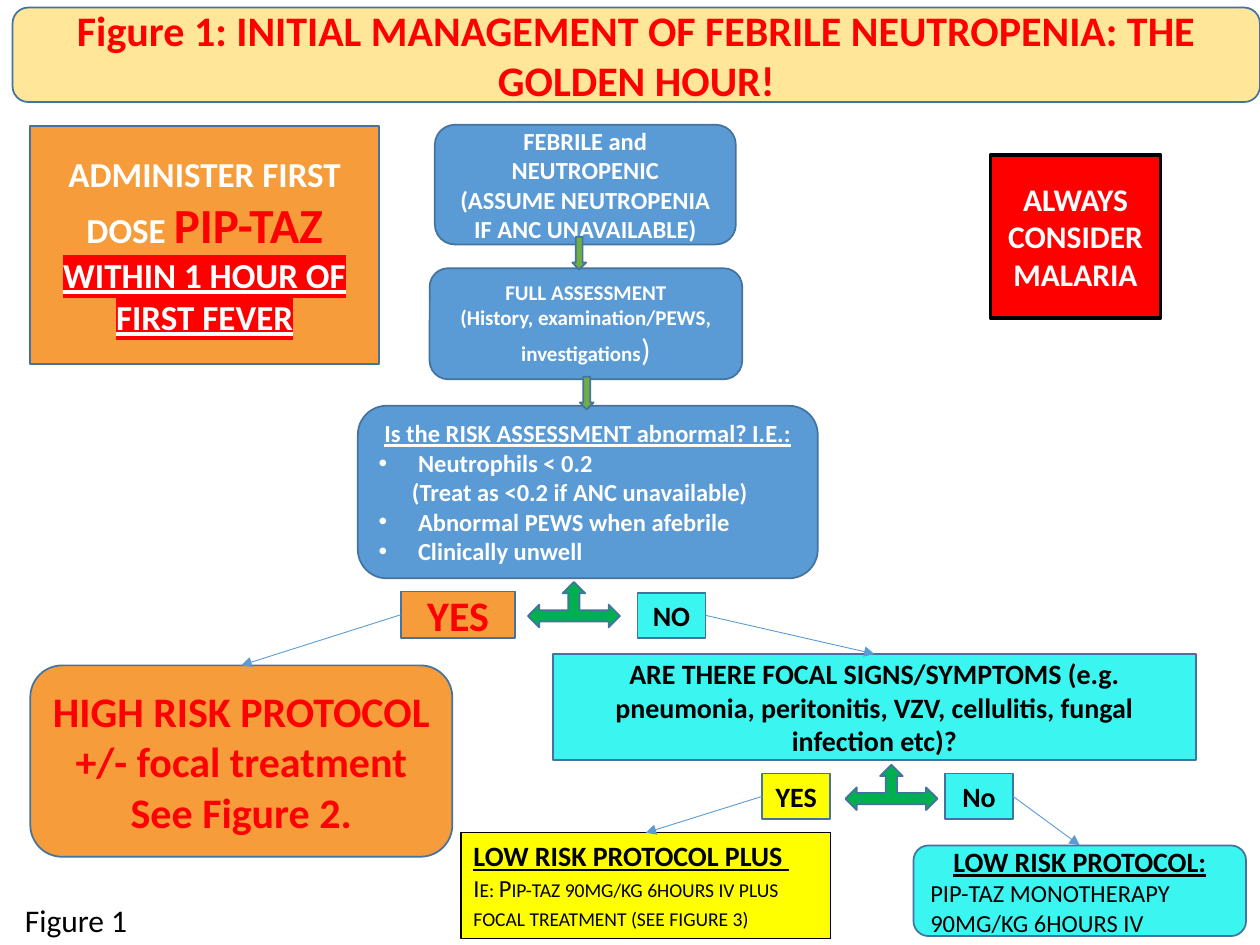
from dataclasses import dataclass

from lxml import etree
from pptx import Presentation
from pptx import util as u
from pptx.dml import color as c
from pptx.enum import shapes, text
from pptx.oxml import ns

RECT = shapes.MSO_SHAPE.RECTANGLE
ROUND = shapes.MSO_SHAPE.ROUNDED_RECTANGLE
FORK = shapes.MSO_SHAPE.LEFT_RIGHT_UP_ARROW
DOWN = shapes.MSO_SHAPE.DOWN_ARROW
CENTER, LEFT = text.PP_ALIGN.CENTER, text.PP_ALIGN.LEFT
TOP, LEFT_SIDE, RIGHT_SIDE = 0, 1, 3


@dataclass(frozen=True)
class Theme:
    font: str = "Calibri"
    blue: str = "5B9BD5"
    outline: str = "43739E"
    cyan: str = "3BF5F1"
    orange: str = "F69C3A"
    yellow: str = "FFFF00"
    cream: str = "FFE699"
    red: str = "FF0000"
    fork: str = "00B050"
    step_arrow: str = "70AD47"
    white: str = "FFFFFF"
    black: str = "000000"
    small: int = 12
    body: int = 14
    label: int = 16
    note: int = 18
    callout: int = 20
    heading: int = 24
    drug: int = 28


THEME = Theme()


def rgb(value):
    return c.RGBColor.from_string(value)


def add_box(page, kind, area, fill, line=THEME.outline, width=1):
    box = page.shapes.add_shape(kind, *(u.Pt(length) for length in area))
    box.shadow.inherit = False
    box.fill.solid()
    box.fill.fore_color.rgb = rgb(fill)
    box.line.color.rgb = rgb(line)
    box.line.width = u.Pt(width)
    box.text_frame.word_wrap = True
    box.text_frame.vertical_anchor = text.MSO_ANCHOR.MIDDLE
    return box


def write(box, words, size, color, bold=True, underline=False, align=CENTER,
          indent=0, bullet=False, highlight=None, small_caps=False, join=False):
    """Add a paragraph, or with join a further span of the last one."""
    frame = box.text_frame
    para = frame.paragraphs[-1]
    if para.runs and not join:
        para = frame.add_paragraph()
    para.alignment = align
    if indent:
        props = para._p.get_or_add_pPr()
        props.set("marL", str(u.Pt(indent)))
        props.set("indent", str(-u.Pt(indent) if bullet else 0))
        if bullet:
            etree.SubElement(props, ns.qn("a:buFont"), typeface="Arial")
            etree.SubElement(props, ns.qn("a:buChar"), char="•")
    span = para.add_run()
    span.text = words
    font = span.font
    font.name, font.size = THEME.font, u.Pt(size)
    font.bold, font.underline = bold, underline
    font.color.rgb = rgb(color)
    props = span._r.get_or_add_rPr()
    if small_caps:
        props.set("cap", "small")
    if highlight:
        mark = etree.Element(ns.qn("a:highlight"))
        etree.SubElement(mark, ns.qn("a:srgbClr"), val=highlight)
        props.find(ns.qn("a:solidFill")).addnext(mark)


def connect(page, start, start_side, end):
    """Draw an arrow from a side of one box to the top of another."""
    arrow = page.shapes.add_connector(shapes.MSO_CONNECTOR.STRAIGHT, 0, 0, 0, 0)
    arrow.begin_connect(start, start_side)
    arrow.end_connect(end, TOP)
    arrow.line.color.rgb = rgb(THEME.blue)
    arrow.line.width = u.Pt(0.5)
    etree.SubElement(arrow.line._get_or_add_ln(), ns.qn("a:tailEnd"), type="triangle")
    etree.SubElement(arrow._element.spPr, ns.qn("a:effectLst"))


def add_banner(page, area):
    banner = add_box(page, ROUND, area, THEME.cream)
    write(banner, "Figure 1: INITIAL MANAGEMENT OF FEBRILE NEUTROPENIA: THE GOLDEN HOUR!",
          THEME.heading, THEME.red)


def add_first_dose(page, area):
    box = add_box(page, RECT, area, THEME.orange)
    write(box, "ADMINISTER FIRST DOSE ", THEME.callout, THEME.white)
    write(box, "PIP-TAZ", THEME.drug, THEME.red, join=True)
    write(box, " ", THEME.callout, THEME.white, join=True)
    write(box, "WITHIN 1 HOUR OF FIRST FEVER", THEME.callout, THEME.white,
          underline=True, highlight=THEME.red, join=True)


def add_malaria_warning(page, area):
    box = add_box(page, RECT, area, THEME.red, THEME.black, 2.25)
    write(box, "ALWAYS CONSIDER MALARIA", THEME.note, THEME.white)


def add_assessment(page, area):
    left, top, width, height = area

    # Three steps, the last filling the width and the foot of the region
    febrile = add_box(page, ROUND, (left + 44, top, 172, 68.4), THEME.blue)
    for line in ("FEBRILE and NEUTROPENIC", "(ASSUME NEUTROPENIA IF ANC UNAVAILABLE)"):
        write(febrile, line, THEME.body, THEME.white)

    full = add_box(page, ROUND, (left + 41, top + 82, 178.6, 63.4), THEME.blue)
    write(full, "FULL ASSESSMENT", THEME.small, THEME.white)
    write(full, "(History, examination/PEWS, investigations", THEME.small, THEME.white)
    write(full, ")", THEME.note, THEME.white, bold=False, join=True)

    risk_height = 98.6
    risk = add_box(page, ROUND, (left, top + height - risk_height, width, risk_height),
                   THEME.blue)
    write(risk, "Is the RISK ASSESSMENT abnormal? I.E.:", THEME.body, THEME.white,
          underline=True)
    for line, indent, bullet in (("Neutrophils < 0.2", 22.5, True),
                                 ("(Treat as <0.2 if ANC unavailable)", 19, False),
                                 ("Abnormal PEWS when afebrile", 22.5, True),
                                 ("Clinically unwell", 22.5, True)):
        write(risk, line, THEME.body, THEME.white, align=LEFT,
              indent=indent, bullet=bullet)

    # Arrows between the steps
    for across, down in ((122.5, 64), (126.8, 144)):
        add_box(page, DOWN, (left + across, top + down, 7.9, 18.7), THEME.step_arrow)


def add_decision(page, area, yes, no, yes_size, fork_gap):
    """Place a yes label, a forked arrow and a no label; return the labels."""
    left, top, width, height = area
    labels = []
    for (words, size, color, fill), (label_width, label_height), right in (
            (yes, yes_size, False), (no, (38.9, 25.9), True)):
        x = left + width - label_width if right else left
        label = add_box(page, RECT, (x, top + height - label_height,
                                     label_width, label_height), fill)
        write(label, words, size, color)
        labels.append(label)
    add_box(page, FORK, (left + yes_size[0] + fork_gap, top, 52.6, 25.9), THEME.fork)
    return labels


def add_high_risk(page, area):
    box = add_box(page, ROUND, area, THEME.orange)
    for line in ("HIGH RISK PROTOCOL", "+/- focal treatment", "See Figure 2."):
        write(box, line, THEME.heading, THEME.red)
    return box


def add_focal_question(page, area):
    box = add_box(page, RECT, area, THEME.cyan)
    write(box, "ARE THERE FOCAL SIGNS/SYMPTOMS (e.g. pneumonia, peritonitis, VZV, "
          "cellulitis, fungal infection etc)?", THEME.label, THEME.black)
    return box


def add_low_risk(page, kind, area, fill, title, treatment, align, line, width, caps):
    box = add_box(page, kind, area, fill, line, width)
    write(box, title, THEME.label, THEME.black, underline=True, align=align)
    write(box, treatment, THEME.body, THEME.black, bold=False, align=LEFT,
          small_caps=caps)
    return box


def add_caption(page, area):
    caption = page.shapes.add_textbox(*(u.Pt(length) for length in area))
    caption.text_frame.word_wrap = True
    write(caption, "Figure 1", THEME.note, THEME.black, bold=False, align=LEFT)


def main():
    deck = Presentation()
    deck.slide_width, deck.slide_height = u.Pt(720), u.Pt(540)
    page = deck.slides.add_slide(deck.slide_layouts[6])

    # Heading, callouts and assessment steps
    add_banner(page, (7.2, 4.3, 712.8, 54))
    add_first_dose(page, (17.3, 72, 199.4, 136.1))
    add_malaria_warning(page, (566, 88.6, 97.2, 92.9))
    add_assessment(page, (204.5, 71.3, 262.8, 259.2))

    # Risk decision
    no = ("NO", THEME.label, THEME.black, THEME.cyan)
    high_yes, high_no = add_decision(
        page, (229, 332.6, 174.2, 32), ("YES", THEME.heading, THEME.red, THEME.orange),
        no, (65.5, 26.6), 7.2)
    connect(page, high_yes, LEFT_SIDE, add_high_risk(page, (17.3, 380.2, 241.2, 109.4)))
    connect(page, high_no, RIGHT_SIDE,
            add_focal_question(page, (316.1, 373.7, 367.2, 60.5)))

    # Focal decision
    focal_yes, focal_no = add_decision(
        page, (435.6, 437, 143.3, 31), ("YES", THEME.label, THEME.black, THEME.yellow),
        ("No",) + no[1:], (38.9, 25.9), 8.6)
    plus = add_low_risk(
        page, RECT, (263.5, 475.9, 211, 60.5), THEME.yellow, "LOW RISK PROTOCOL PLUS ",
        "Ie: Pip-taz 90mg/kg 6hours iv plus focal treatment (see figure 3)",
        LEFT, THEME.black, 0.75, True)
    plus.text_frame.vertical_anchor = text.MSO_ANCHOR.TOP
    low = add_low_risk(
        page, ROUND, (522, 483.1, 190.1, 51.8), THEME.cyan, "LOW RISK PROTOCOL:",
        "PIP-TAZ MONOTHERAPY 90MG/KG 6HOURS IV", CENTER, THEME.outline, 1, False)
    connect(page, focal_yes, LEFT_SIDE, plus)
    connect(page, focal_no, RIGHT_SIDE, low)

    add_caption(page, (7.2, 511.2, 160.6, 28.8))
    deck.save("out.pptx")


if __name__ == "__main__":
    main()
